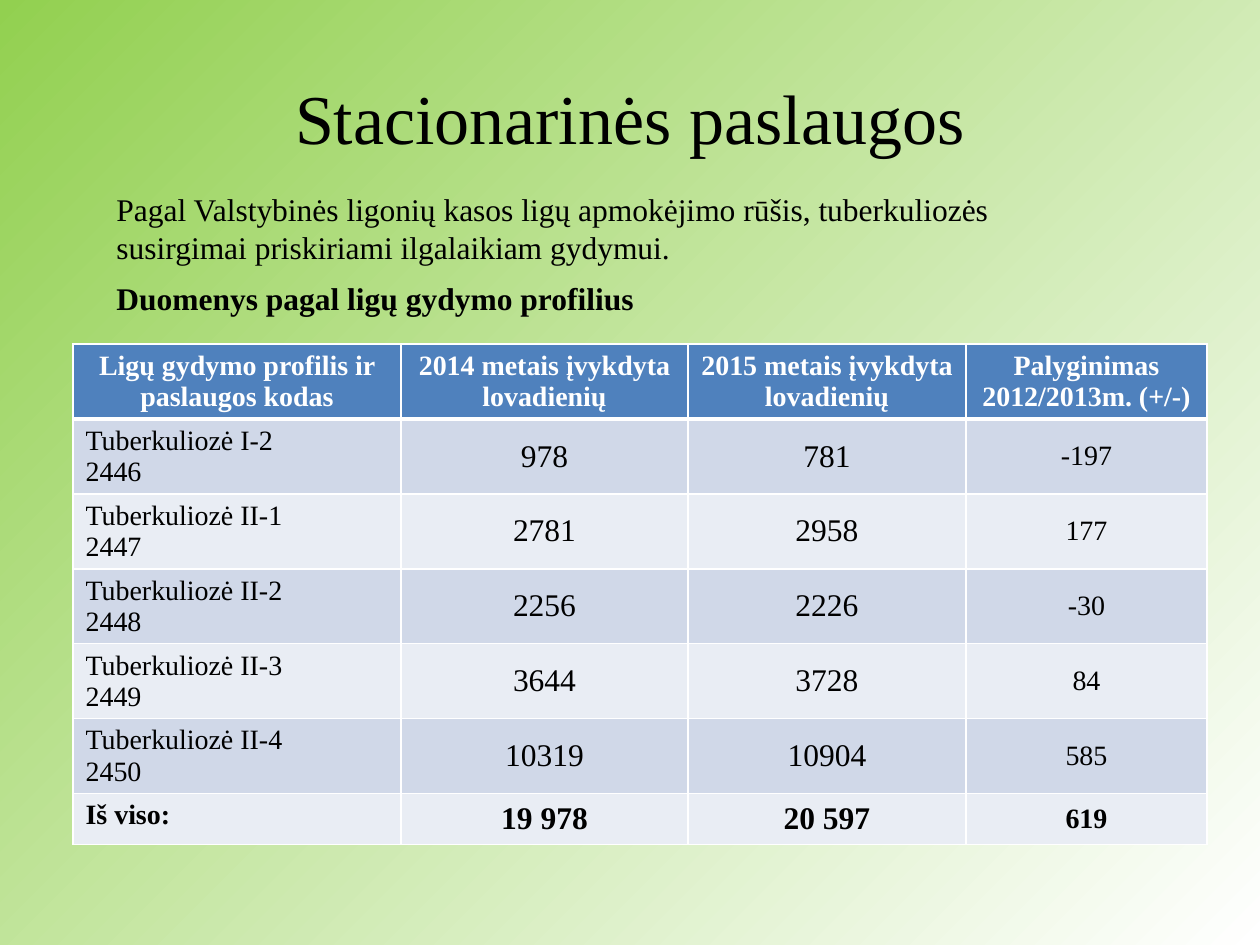
from dataclasses import dataclass

from lxml.etree import SubElement
from pptx import Presentation
from pptx.dml.color import RGBColor
from pptx.enum.text import MSO_ANCHOR as Anchor, PP_ALIGN as Align
from pptx.oxml.ns import qn
from pptx.util import Emu, Pt

SCALE = 914400 / 126  # EMU in one px


def px(length):
    return Emu(round(length * SCALE))


@dataclass(frozen=True)
class Theme:
    font: str = "Times New Roman"
    ink: str = "000000"
    paper: str = "FFFFFF"
    green: str = "92D050"
    header: str = "4F81BD"
    bands: tuple = ("D0D8E8", "E9EDF4")
    title_size: int = 40
    text_size: int = 18
    table_size: int = 16
    border: int = 1
    header_border: int = 3


class SlideBuilder:
    def __init__(self, deck, theme):
        self.theme = theme
        self.slide = deck.slides.add_slide(deck.slide_layouts[5])  # Title Only

    def background(self):
        fill = self.slide.background.fill
        fill.gradient()
        fill.gradient_angle = 315  # counter-clockwise: top left to bottom right
        for stop, color in zip(fill.gradient_stops, (self.theme.green, self.theme.paper)):
            stop.color.rgb = RGBColor.from_string(color)

    def set_text(self, frame, text, size, color=None, bold=False, align=Align.LEFT):
        frame.text = text
        style = {"name": self.theme.font, "size": Pt(size), "bold": bold}
        for para in frame.paragraphs:
            para.alignment = align
            for span in para.runs:
                for key, value in style.items():
                    setattr(span.font, key, value)
                span.font.color.rgb = RGBColor.from_string(color or self.theme.ink)

    def place(self, shape, bounds):
        for key, value in zip(("left", "top", "width", "height"), bounds):
            setattr(shape, key, px(value))

    def title(self, text, bounds):
        box = self.slide.shapes.title
        self.place(box, bounds)
        box.text_frame.vertical_anchor = Anchor.MIDDLE
        self.set_text(box.text_frame, text, self.theme.title_size, align=Align.CENTER)

    def text(self, text, bounds, bold=False):
        box = self.slide.shapes.add_textbox(*map(px, bounds))
        box.text_frame.word_wrap = True
        self.set_text(box.text_frame, text, self.theme.text_size, bold=bold)

    def borders(self, cell, widths):
        props = cell._tc.get_or_add_tcPr()
        for side, width in zip("LRTB", widths):
            line = SubElement(props, qn(f"a:ln{side}"), w=str(Pt(width)))
            fill = SubElement(line, qn("a:solidFill"))
            SubElement(fill, qn("a:srgbClr"), val=self.theme.paper)

    def cell(self, cell, text, row, column, last_row):
        theme = self.theme
        is_header, is_label = row == 0, column == 0
        thin, thick = theme.border, theme.header_border
        self.borders(cell, (thin, thin, thick if row == 1 else thin,
                            thick if is_header else thin))
        cell.fill.solid()
        color = theme.header if is_header else theme.bands[(row - 1) % 2]
        cell.fill.fore_color.rgb = RGBColor.from_string(color)

        is_count = not is_header and column in (1, 2)
        if not is_header and not is_label:
            cell.vertical_anchor = Anchor.MIDDLE
        self.set_text(cell.text_frame, text,
                      theme.text_size if is_count else theme.table_size,
                      color=theme.paper if is_header else theme.ink,
                      bold=is_header or row == last_row,
                      align=Align.LEFT if is_label and not is_header else Align.CENTER)

    def table(self, rows, left, top, widths, heights):
        bounds = (left, top, sum(widths), sum(heights))
        table = self.slide.shapes.add_table(len(rows), len(widths), *map(px, bounds)).table
        for column, width in zip(table.columns, widths):
            column.width = px(width)
        for line, height in zip(table.rows, heights):
            line.height = px(height)
        for row, values in enumerate(rows):
            for column, value in enumerate(values):
                self.cell(table.cell(row, column), value, row, column, len(rows) - 1)


HEADER = ("Ligų gydymo profilis ir paslaugos kodas", "2014 metais įvykdyta lovadienių",
          "2015 metais įvykdyta lovadienių", "Palyginimas 2012/2013m. (+/-)")
PROFILES = [
    ("Tuberkuliozė I-2\n2446", "978", "781", "-197"),
    ("Tuberkuliozė II-1\n2447", "2781", "2958", "177"),
    ("Tuberkuliozė II-2\n2448", "2256", "2226", "-30"),
    ("Tuberkuliozė II-3\n2449", "3644", "3728", "84"),
    ("Tuberkuliozė II-4\n2450", "10319", "10904", "585"),
]
TOTAL = ("Iš viso:", "19 978", "20 597", "619")


def main():
    deck = Presentation()
    deck.slide_width, deck.slide_height = px(1260), px(945)
    page = SlideBuilder(deck, Theme())

    # Background and heading
    page.background()
    page.title("Stacionarinės paslaugos", (63, 38, 1134, 158))

    # Bed-days by treatment profile
    page.table([HEADER, *PROFILES, TOTAL], 73, 344, (328, 287, 278, 241),
               [74] + [75] * len(PROFILES) + [51])

    # Introduction and table caption
    page.text("Pagal Valstybinės ligonių kasos ligų apmokėjimo rūšis, tuberkuliozės "
              "susirgimai priskiriami ilgalaikiam gydymui.", (104, 184, 1032, 89))
    page.text("Duomenys pagal ligų gydymo profilius", (104, 273, 1071, 51), bold=True)

    deck.save("out.pptx")


if __name__ == "__main__":
    main()
